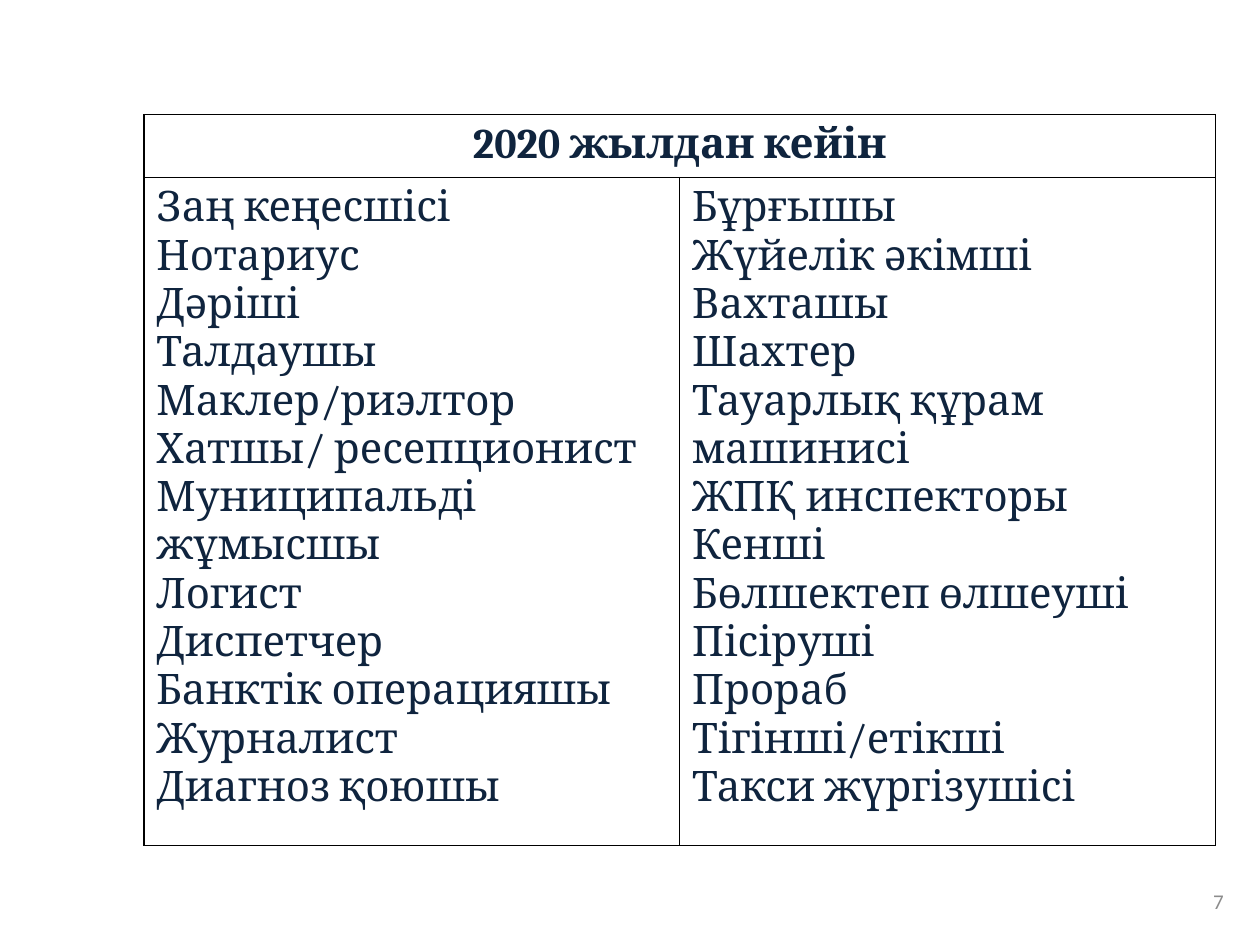
from lxml.etree import SubElement
from pptx import Presentation
from pptx.dml.color import RGBColor
from pptx.enum.text import MSO_ANCHOR, PP_ALIGN
from pptx.oxml.ns import qn
from pptx.util import Cm, Pt

NAVY = RGBColor(0x0F, 0x24, 0x3E)
GREY = RGBColor(0x8C, 0x8C, 0x8C)
BLACK = RGBColor(0, 0, 0)

HEAD = "2020 жылдан кейін"
LEFT = [
    "Заң кеңесшісі", "Нотариус", "Дәріші", "Талдаушы",
    "Маклер/риэлтор", "Хатшы/ ресепционист", "Муниципальді жұмысшы",
    "Логист", "Диспетчер", "Банктік операцияшы", "Журналист",
    "Диагноз қоюшы",
]
RIGHT = [
    "Бұрғышы", "Жүйелік әкімші", "Вахташы", "Шахтер",
    "Тауарлық құрам машинисі", "ЖПҚ инспекторы", "Кенші",
    "Бөлшектеп өлшеуші", "Пісіруші", "Прораб", "Тігінші/етікші",
    "Такси жүргізушісі",
]


class Deck:
    body = {"name": "Cambria", "size": Pt(24), "bold": False}
    head = {**body, "bold": True}
    note = {"name": "Calibri", "size": Pt(12)}

    def __init__(self, slide):
        self.slide = slide

    def text(self, frame, lines, style, color, align=PP_ALIGN.LEFT):
        frame.text = "\n".join(lines)
        for para in frame.paragraphs:
            para.alignment = align
            font = para.runs[0].font
            for key, value in style.items():
                setattr(font, key, value)
            font.color.rgb = color

    def border(self, cell):
        props = cell._tc.get_or_add_tcPr()
        for side in ("lnL", "lnR", "lnT", "lnB"):
            line = SubElement(props, qn(f"a:{side}"), w=str(Pt(1)))
            fill = SubElement(line, qn("a:solidFill"))
            SubElement(fill, qn("a:srgbClr"), val=str(BLACK))
        cell.fill.background()

    def table(self, box, rows, head, lists):
        shape = self.slide.shapes.add_table(len(rows), len(lists), *box)
        table = shape.table
        table.first_row = table.horz_banding = False
        for row, height in zip(table.rows, rows):
            row.height = height
        for cell in table.iter_cells():
            self.border(cell)
        top = table.cell(0, 0)
        top.merge(table.cell(0, len(lists) - 1))
        self.text(top.text_frame, [head], self.head, NAVY, PP_ALIGN.CENTER)
        for col, lines in enumerate(lists):
            self.text(table.cell(1, col).text_frame, lines, self.body, NAVY)

    def label(self, box, text):
        frame = self.slide.shapes.add_textbox(*box).text_frame
        frame.word_wrap = True
        frame.vertical_anchor = MSO_ANCHOR.MIDDLE
        self.text(frame, [text], self.note, GREY, PP_ALIGN.RIGHT)


def main():
    show = Presentation()
    show.slide_width, show.slide_height = Cm(25.4), Cm(19.05)
    deck = Deck(show.slides.add_slide(show.slide_layouts[6]))
    deck.label((Cm(18.2), Cm(17.65), Cm(6.72), Cm(1.02)), "7")
    rows = Cm(1.23), Cm(12.9)
    deck.table((Cm(2.9), Cm(2.31), Cm(21.6), sum(rows)), rows, HEAD,
               [LEFT, RIGHT])
    show.save("out.pptx")


if __name__ == "__main__":
    main()
